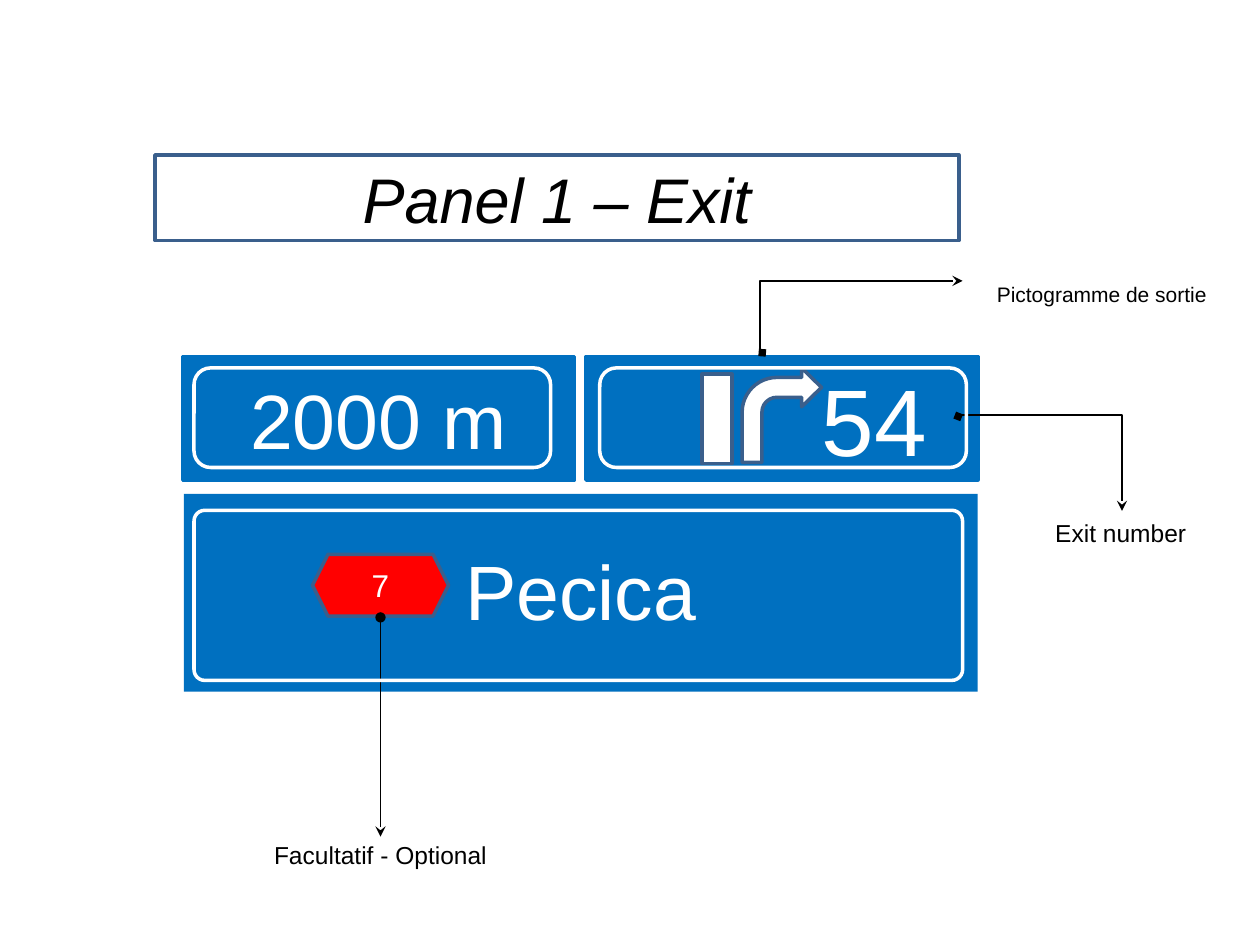
"""Build the annotated motorway exit panel slide."""
from lxml.etree import SubElement
from pptx import Presentation
from pptx.dml.color import RGBColor
from pptx.enum.shapes import MSO_CONNECTOR, MSO_SHAPE
from pptx.enum.text import MSO_ANCHOR, PP_ALIGN
from pptx.oxml.ns import qn
from pptx.util import Inches, Pt

COLORS = {"sign": "0070C0", "route": "FF0000", "edge": "3A5F8C", "white": "FFFFFF", "black": "000000"}
RECT, ROUND = MSO_SHAPE.RECTANGLE, MSO_SHAPE.ROUNDED_RECTANGLE
SIGN = {"fill": "sign", "color": "white", "size": 44}
LABEL = {"fill": "white", "line": "white", "size": 14}
SYMBOL = {"fill": "white", "line": "edge"}

PANELS = [
    (RECT, (1.46, 3.92, 6.3, 1.57), "Pecica",
     {**SIGN, "anchor": MSO_ANCHOR.TOP, "insets": (0.1, 0.39, 0.1, 0.24), "before": 6}),
    (MSO_SHAPE.HEXAGON, (2.48, 4.4, 1.08, 0.49), "7",
     {"fill": "route", "line": "edge", "color": "white", "size": 18}),
    (ROUND, (1.45, 2.83, 3.11, 0.98), "2000 m", {**SIGN, "line": "sign", "adj": [0]}),
    (ROUND, (4.65, 2.83, 3.11, 0.98), "54",
     {**SIGN, "line": "sign", "adj": [0], "size": 54, "insets": (1.57, 0.05, 0.1, 0.05)}),
    (RECT, (5.57, 2.97, 0.24, 0.71), "", SYMBOL),
    (MSO_SHAPE.BENT_ARROW, (5.89, 2.92, 0.63, 0.75), "", {**SYMBOL, "adj": [0.25, 0.245, 0.25, 0.438]}),
    (RECT, (1.23, 1.23, 6.38, 0.68), "Panel 1 – Exit", {"line": "edge", "size": 36, "italic": True}),
]
LABELS = [
    (None, (7.76, 2.18, 1.97, 0.31), "Pictogramme de sortie", {"size": 12}),
    (RECT, (8.07, 4.08, 1.65, 0.29), "Exit number", LABEL),
    (RECT, (1.98, 6.64, 2.08, 0.29), "Facultatif - Optional", LABEL),
]
CALLOUTS = [
    ((6.05, 2.8, 7.64, 2.23), {"head": "diamond", "bend": -1200}),
    ((8.63, 3.03, 7.88, 4.33), {"head": "diamond", "bend": -1700, "rot": 270}),
    ((3.02, 4.9, 3.02, 6.64), {"head": "oval", "target": "Facultatif - Optional"}),
]
BORDERS = [
    (ROUND, (1.54, 2.92, 2.83, 0.79), "", {"line": "white"}),
    (ROUND, (4.76, 2.92, 2.91, 0.79), "", {"line": "white"}),
    (ROUND, (1.54, 4.05, 6.1, 1.35), "", {"line": "white", "adj": [0.063]}),
]


def rgb(name):
    return RGBColor.from_string(COLORS[name])


def write(sp, text, size=14, color="black", italic=False, anchor=MSO_ANCHOR.MIDDLE,
          insets=(0.1, 0.05, 0.1, 0.05), before=0):
    tf = sp.text_frame
    tf.word_wrap, tf.vertical_anchor = True, anchor
    tf.margin_left, tf.margin_top, tf.margin_right, tf.margin_bottom = map(Inches, insets)
    p = tf.paragraphs[0]
    p.alignment, p.space_before = PP_ALIGN.CENTER, Pt(before)
    r = p.add_run()
    r.text = text
    r.font.name, r.font.size, r.font.italic = "Arial", Pt(size), italic
    r.font.color.rgb = rgb(color)


def add_box(s, kind, box, text, fill=None, line=None, adj=(), **fmt):
    pos = map(Inches, box)
    if kind is None:
        sp = s.shapes.add_textbox(*pos)
    else:
        sp = s.shapes.add_shape(kind, *pos)
        sp.shadow.inherit = False
        for i, value in enumerate(adj):
            sp.adjustments[i] = value
        if fill:
            sp.fill.solid()
            sp.fill.fore_color.rgb = rgb(fill)
        else:
            sp.fill.background()
        if line:
            sp.line.color.rgb = rgb(line)
            sp.line.width = Pt(2)
        else:
            sp.line.fill.background()
    if text:
        write(sp, text, **fmt)
    return sp


def add_callout(s, ends, head, bend=None, rot=0, target=None):
    kind = MSO_CONNECTOR.STRAIGHT if bend is None else MSO_CONNECTOR.ELBOW
    cn = s.shapes.add_connector(kind, *map(Inches, ends))
    cn.line.color.rgb = rgb("black")
    cn.line.width = Pt(1)
    pr = cn._element.spPr
    ln = pr.find(qn("a:ln"))
    SubElement(ln, qn("a:headEnd"), type=head)
    SubElement(ln, qn("a:tailEnd"), type="stealth")
    SubElement(pr, qn("a:effectLst"))
    if bend is not None:
        guides = pr.find(qn("a:prstGeom")).find(qn("a:avLst"))
        SubElement(guides, qn("a:gd"), name="adj1", fmla=f"val {bend}")
    if rot:
        pr.find(qn("a:xfrm")).set("rot", str(rot * 60000))
    if target is not None:
        cn.end_connect(target, 0)


def main():
    prs = Presentation()
    prs.slide_width, prs.slide_height = Inches(10), Inches(7.5)
    s = prs.slides.add_slide(prs.slide_layouts[6])
    boxes = {}
    for kind, box, text, fmt in PANELS + LABELS:
        boxes[text] = add_box(s, kind, box, text, **fmt)
    for ends, opts in CALLOUTS:
        add_callout(s, ends, **{**opts, "target": boxes.get(opts.get("target"))})
    for kind, box, text, fmt in BORDERS:
        add_box(s, kind, box, text, **fmt)
    prs.save("out.pptx")


if __name__ == "__main__":
    main()
